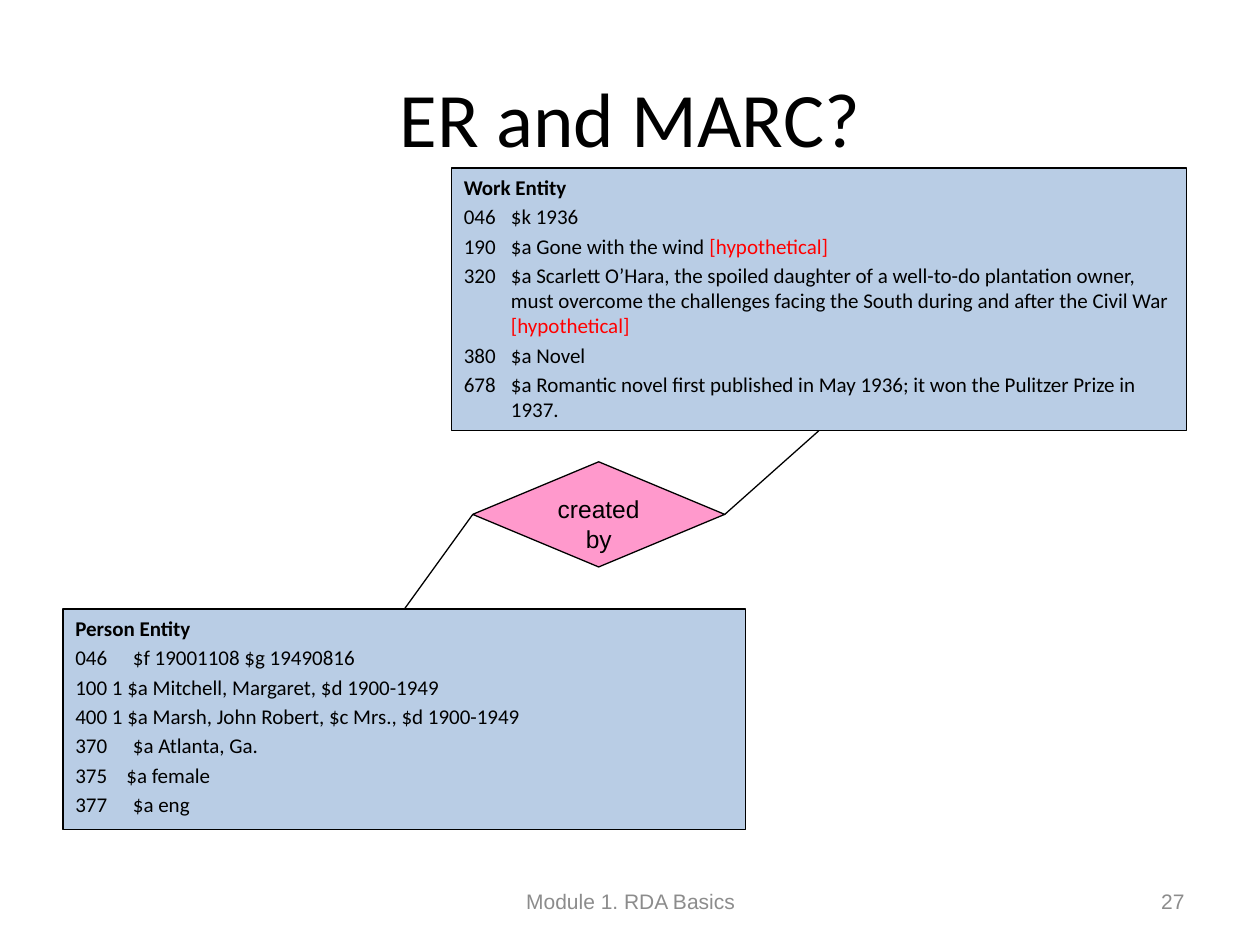
from pptx import Presentation
from pptx.util import Cm, Pt
from pptx.dml.color import RGBColor
from pptx.enum.shapes import MSO_SHAPE, MSO_CONNECTOR
from pptx.enum.text import PP_ALIGN, MSO_ANCHOR
from pptx.oxml.ns import qn
from lxml.etree import SubElement
from dataclasses import dataclass


@dataclass(frozen=True)
class Theme:
    ink: str = "000000"
    note: str = "FF0000"
    box: str = "B9CDE5"
    link: str = "FF99CC"
    foot: str = "8C8C8C"
    head: int = 44
    text: int = 12
    verb: int = 14
    edge: float = 0.75


theme = Theme()


def style(font, name, size, color, bold=False):
    look = {"name": name, "size": Pt(size), "bold": bold}
    for key, value in look.items():
        setattr(font, key, value)
    font.color.rgb = RGBColor.from_string(color)


def shape(kind, area, fill):
    item = slide.shapes.add_shape(kind, *map(Cm, area))
    item.shadow.inherit = False
    item.fill.solid()
    item.fill.fore_color.rgb = RGBColor.from_string(fill)
    item.line.color.rgb = RGBColor.from_string(theme.ink)
    item.line.width = Pt(theme.edge)
    item.text_frame.vertical_anchor = MSO_ANCHOR.TOP
    return item


deck = Presentation()
deck.slide_width, deck.slide_height = Cm(25.4), Cm(19.05)
slide = deck.slides.add_slide(deck.slide_layouts[5])

# Title
title = slide.shapes.title
place = {"left": 1.27, "top": 0.76, "width": 22.86, "height": 3.18}
for key, value in place.items():
    setattr(title, key, Cm(value))
title.text_frame.text = "ER and MARC?"
title.text_frame.vertical_anchor = MSO_ANCHOR.MIDDLE
line = title.text_frame.paragraphs[0]
line.alignment = PP_ALIGN.CENTER
style(line.runs[0].font, "Calibri", theme.head, theme.ink)

# Entity boxes: each row has a hanging indent and an optional red note
near, far = 0.95, 1.16
plot = ("320\t$a Scarlett O’Hara, the spoiled daughter of a well-to-do "
        "plantation owner, must overcome the challenges facing the South "
        "during and after the Civil War ")
prize = ("678\t$a Romantic novel first published in May 1936; "
         "it won the Pulitzer Prize in 1937.")
guess = "[hypothetical]"
work = [
    ("Work Entity", near, ""),
    ("046\t$k 1936", near, ""),
    ("190\t$a Gone with the wind ", near, guess),
    (plot, near, guess),
    ("380\t$a Novel", near, ""),
    (prize, near, ""),
]
person = [
    ("Person Entity", near, ""),
    ("046\t$f 19001108 $g 19490816", far, ""),
    ("100 1 $a Mitchell, Margaret, $d 1900-1949", near, ""),
    ("400 1 $a Marsh, John Robert, $c Mrs., $d 1900-1949", near, ""),
    ("370\t$a Atlanta, Ga.", far, ""),
    ("375\t$a female", 1.03, ""),
    ("377\t$a eng", far, ""),
]
boxes = []
for area, rows in [((9.1, 3.39, 14.82, 5.29), work),
                   ((1.27, 12.28, 13.76, 4.45), person)]:
    box = shape(MSO_SHAPE.RECTANGLE, area, theme.box)
    boxes.append(box)
    frame = box.text_frame
    for i, (text, hang, note) in enumerate(rows):
        line = frame.add_paragraph() if i else frame.paragraphs[0]
        line.alignment = PP_ALIGN.LEFT
        line.space_before = Pt(2.4 if i else 0)
        props = line._p.get_or_add_pPr()
        props.set("marL", str(Cm(hang)))
        props.set("indent", str(-Cm(hang)))
        for words, color in [(text, theme.ink), (note, theme.note)]:
            if words:
                run = line.add_run()
                run.text = words
                style(run.font, "Calibri", theme.text, color, i == 0)

# Relation
verb = shape(MSO_SHAPE.FLOWCHART_DECISION, (9.53, 9.31, 5.08, 2.12), theme.link)
verb.text_frame.text = "created by"
line = verb.text_frame.paragraphs[0]
line.alignment = PP_ALIGN.CENTER
style(line.runs[0].font, "Arial", theme.verb, theme.ink)

# Lines from the relation to both entities
for side, box, end in [(3, boxes[0], 2), (1, boxes[1], 0)]:
    wire = slide.shapes.add_connector(MSO_CONNECTOR.STRAIGHT, 0, 0, 0, 0)
    wire.begin_connect(verb, side)
    wire.end_connect(box, end)
    wire.line.color.rgb = RGBColor.from_string(theme.ink)
    wire.line.width = Pt(theme.edge)
    SubElement(wire._element.spPr, qn("a:effectLst"))

# Footer and page number
for left, width, text, align in [
        (8.69, 8.05, "Module 1. RDA Basics", PP_ALIGN.CENTER),
        (18.21, 5.92, "27", PP_ALIGN.RIGHT)]:
    foot = slide.shapes.add_textbox(Cm(left), Cm(17.65), Cm(width), Cm(1.02))
    frame = foot.text_frame
    frame.word_wrap = True
    frame.vertical_anchor = MSO_ANCHOR.MIDDLE
    frame.text = text
    line = frame.paragraphs[0]
    line.alignment = align
    style(line.runs[0].font, "Arial", theme.text, theme.foot)

deck.save("out.pptx")
